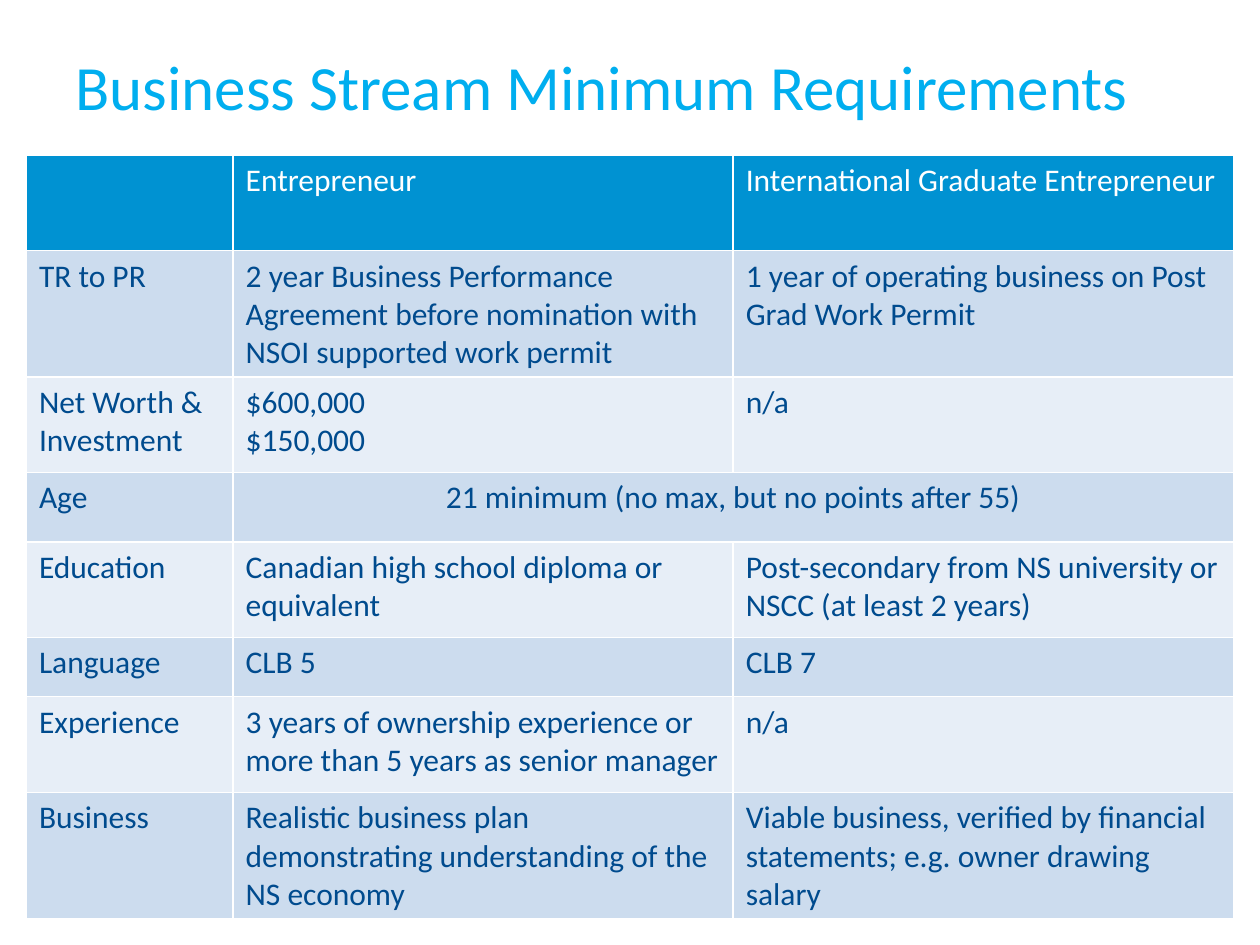
from lxml.etree import SubElement
from pptx import Presentation
from pptx.dml.color import RGBColor
from pptx.enum.text import MSO_ANCHOR, PP_ALIGN
from pptx.oxml.ns import qn
from pptx.util import Pt

SKY = RGBColor(0x00, 0xAE, 0xEF)
BLUE = RGBColor(0x00, 0x92, 0xD2)
NAVY = RGBColor(0x00, 0x4B, 0x8E)
BANDS = RGBColor(0xE7, 0xEE, 0xF7), RGBColor(0xCC, 0xDC, 0xEE)
WHITE = RGBColor(0xFF, 0xFF, 0xFF)

TITLE = "Business Stream Minimum Requirements"
# Row height, then the cells; None joins a cell to the one on its left.
ROWS = [
    (54.72, "", "Entrepreneur", "International Graduate Entrepreneur"),
    (54.72, "TR to PR",
     "2 year Business Performance Agreement before nomination with "
     "NSOI supported work permit",
     "1 year of operating business on Post Grad Work Permit"),
    (54.72, "Net Worth & Investment", "$600,000\n$150,000", "n/a"),
    (39.6, "Age", "21 minimum (no max, but no points after 55)", None),
    (54.72, "Education", "Canadian high school diploma or equivalent",
     "Post-secondary from NS university or NSCC (at least 2 years)"),
    (33.84, "Language", "CLB 5", "CLB 7"),
    (54.72, "Experience",
     "3 years of ownership experience or more than 5 years as senior manager",
     "n/a"),
    (66.96, "Business",
     "Realistic business plan demonstrating understanding of the NS economy",
     "Viable business, verified by financial statements; "
     "e.g. owner drawing salary"),
]
WIDTHS = [118.1, 285.8, 285.8]
LEFT, TOP = 15.12, 88.56


def style(frame, size, color):
    for para in frame.paragraphs:
        para.font.name = "Calibri"
        para.font.size = Pt(size)
        para.font.color.rgb = color


def rule(cell):
    """Draw a thin white line on all four sides of the cell."""
    props = cell._tc.get_or_add_tcPr()
    for side in "LRTB":
        line = SubElement(props, qn(f"a:ln{side}"), w=str(Pt(1)))
        fill = SubElement(line, qn("a:solidFill"))
        SubElement(fill, qn("a:srgbClr"), val=str(WHITE))


def add_title(slide):
    box = slide.shapes.add_textbox(Pt(36), Pt(21.6), Pt(648), Pt(90))
    frame = box.text_frame
    format = {"text": TITLE, "word_wrap": True, "margin_top": Pt(5.5),
              "vertical_anchor": MSO_ANCHOR.TOP}
    for key, value in format.items():
        setattr(frame, key, value)
    style(frame, 36, SKY)


def add_grid(slide):
    high = sum(row[0] for row in ROWS)
    table = slide.shapes.add_table(
        len(ROWS), len(WIDTHS), Pt(LEFT), Pt(TOP),
        Pt(sum(WIDTHS)), Pt(high)).table
    for col, wide in zip(table.columns, WIDTHS):
        col.width = Pt(wide)
    for r, (tall, *texts) in enumerate(ROWS):
        table.rows[r].height = Pt(tall)
        for c, text in enumerate(texts):
            cell = table.cell(r, c)
            rule(cell)
            cell.fill.solid()
            cell.fill.fore_color.rgb = BANDS[r % 2] if r else BLUE
            if text is None:
                first = table.cell(r, c - 1)
                first.merge(cell)
                first.text_frame.paragraphs[0].alignment = PP_ALIGN.CENTER
                continue
            cell.text = text
            style(cell.text_frame, 18, NAVY if r else WHITE)


def main():
    deck = Presentation()
    deck.slide_width, deck.slide_height = Pt(720), Pt(540)
    slide = deck.slides.add_slide(deck.slide_layouts[6])
    add_title(slide)
    add_grid(slide)
    deck.save("out.pptx")


if __name__ == "__main__":
    main()
